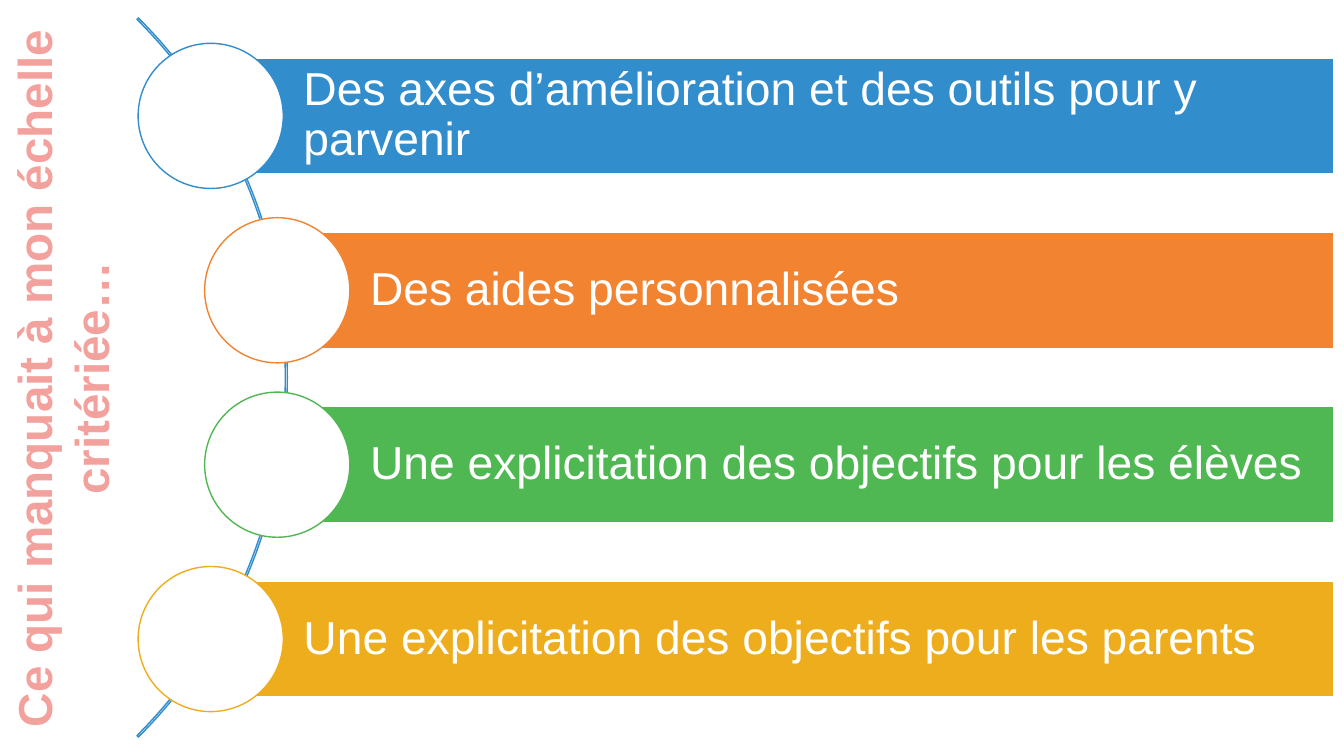
from dataclasses import dataclass

from pptx import Presentation
from pptx.dml.color import RGBColor
from pptx.enum import shapes, text
from pptx.util import Inches, Pt

BLUE = "318DCB"
WHITE = "FFFFFF"
RIGHT = 13.23
BAR = 1.15
DISC = 1.44
FIRST = 1.15
STEP = 1.73


@dataclass
class Item:
    label: str
    color: str
    left: float


ITEMS = [
    Item("Des axes d’amélioration et des outils pour y parvenir", BLUE, 2.09),
    Item("Des aides personnalisées", "F28330", 2.75),
    Item("Une explicitation des objectifs pour les élèves", "50B852", 2.75),
    Item("Une explicitation des objectifs pour les parents", "EEAD1D", 2.09),
]


def rgb(code: str) -> RGBColor:
    return RGBColor.from_string(code)


def add(slide, kind, left: float, top: float, width: float, height: float,
        line: str, fill: str = ""):
    shape = slide.shapes.add_shape(
        kind, Inches(left), Inches(top), Inches(width), Inches(height))
    shape.shadow.inherit = False
    if fill:
        shape.fill.solid()
        shape.fill.fore_color.rgb = rgb(fill)
    else:
        shape.fill.background()
    shape.line.color.rgb = rgb(line)
    shape.line.width = Pt(1)
    return shape


def write(shape, words: str, *, size: float, color: str, bold: bool = False,
          align=text.PP_ALIGN.LEFT, anchor=text.MSO_ANCHOR.MIDDLE,
          spacing: float = 1.0, inset: float = 0.1) -> None:
    frame = shape.text_frame
    frame.word_wrap = True
    frame.auto_size = text.MSO_AUTO_SIZE.NONE
    frame.vertical_anchor = anchor
    frame.margin_left = Inches(inset)
    para = frame.paragraphs[0]
    para.alignment = align
    para.line_spacing = spacing
    run = para.add_run()
    run.text = words
    run.font.name = "Arial"
    run.font.size = Pt(size)
    run.font.bold = bold
    run.font.color.rgb = rgb(color)


def add_title(slide) -> None:
    title = slide.shapes.title
    title.left, title.top = Inches(-3.13), Inches(3.13)
    title.width, title.height = Inches(7.5), Inches(1.25)
    title.rotation = 270
    write(title, "Ce qui manquait à mon échelle critériée…", size=34,
          color="F3A19D", bold=True, align=text.PP_ALIGN.CENTER,
          anchor=text.MSO_ANCHOR.TOP)


def add_arc(slide) -> None:
    arc = add(slide, shapes.MSO_SHAPE.BLOCK_ARC, -7.24, -1.3, 10.09, 10.09,
              BLUE)
    # Start and end angles (315° and 45°), then relative thickness
    for index, value in enumerate((189, 27, 0.002)):
        arc.adjustments[index] = value


def add_item(slide, item: Item, middle: float) -> None:
    """Draw a labelled bar with a disc centred on its left edge."""
    bar = add(slide, shapes.MSO_SHAPE.RECTANGLE, item.left, middle - BAR / 2,
              RIGHT - item.left, BAR, WHITE, item.color)
    write(bar, item.label, size=33, color=WHITE, spacing=0.9, inset=0.92)
    add(slide, shapes.MSO_SHAPE.OVAL, item.left - DISC / 2, middle - DISC / 2,
        DISC, DISC, item.color, WHITE)


def main() -> None:
    deck = Presentation()
    deck.slide_width, deck.slide_height = Inches(13.33), Inches(7.5)
    slide = deck.slides.add_slide(deck.slide_layouts.get_by_name("Title Only"))
    add_title(slide)
    add_arc(slide)
    for row, item in enumerate(ITEMS):
        add_item(slide, item, FIRST + row * STEP)
    deck.save("out.pptx")


if __name__ == "__main__":
    main()
